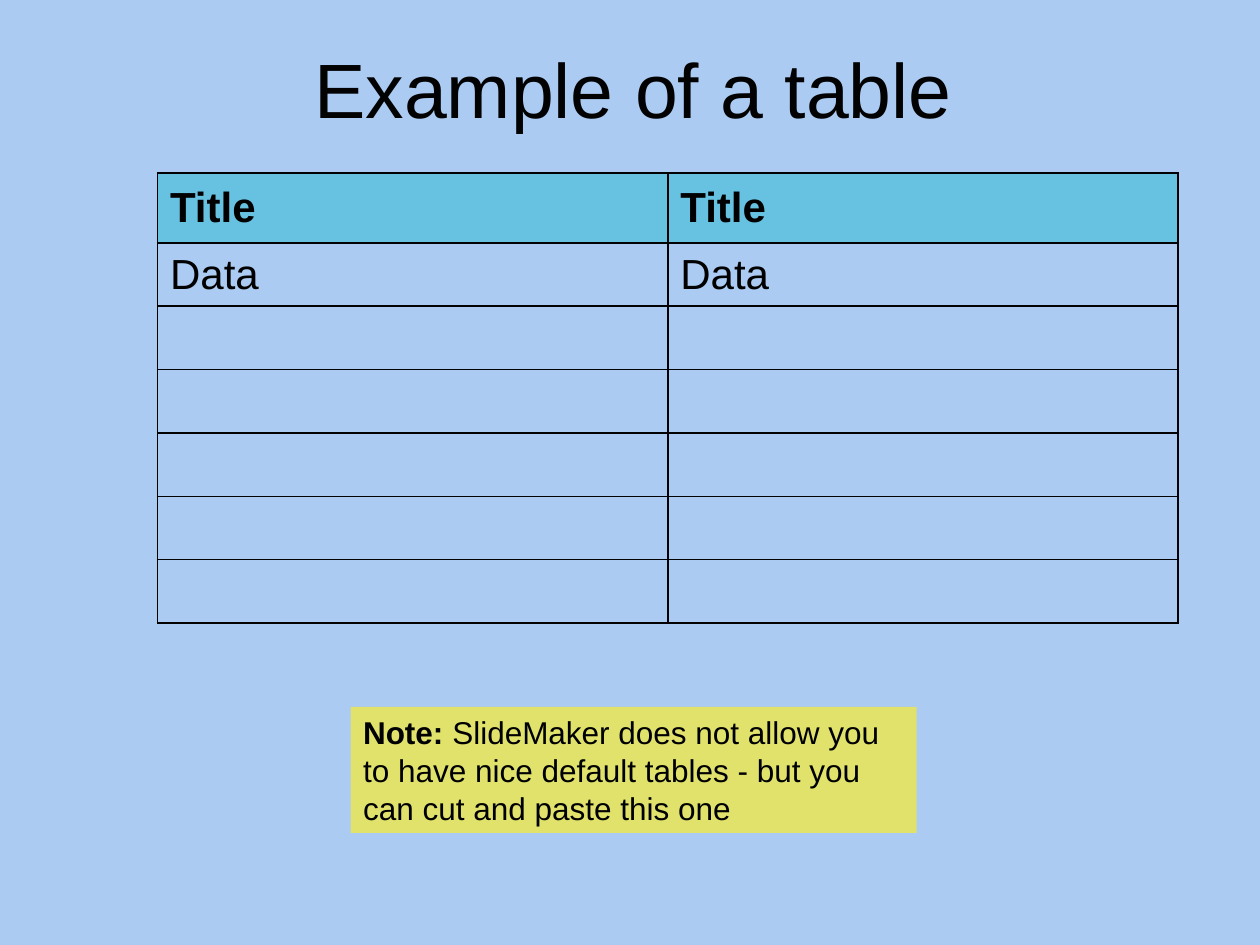
import pptx
import pptx.util
import pptx.dml.color
import pptx.enum.shapes
import pptx.enum.text
import pptx.oxml
import pptx.oxml.ns

Pt = pptx.util.Pt
ANCHOR = pptx.enum.text.MSO_ANCHOR
ALIGN = pptx.enum.text.PP_ALIGN

HEADING = "Example of a table"
ROWS = [("Title", "Title"), ("Data", "Data")] + [("", "")] * 5
NOTE = [
    ("Note: ", True),
    ("SlideMaker does not allow you to have nice default tables"
     " - but you can cut and paste this one", False),
]
COLORS = {
    "background": "ABCBF2",
    "heading": "020202",
    "border": "020202",
    "text": "000000",
    "header": "67C1E0",
    "note": "F2EA40",
}
FONT = "Arial"
HEADER_HEIGHT, ROW_HEIGHT, COLUMN_WIDTH = 40, 36.2, 291.6
NOTE_OPACITY = 75


def color(name):
    return pptx.dml.color.RGBColor.from_string(COLORS[name])


def add_run(paragraph, text, size, color_name="text", bold=False):
    run = paragraph.add_run()
    run.text = text
    run.font.name = FONT
    run.font.size = Pt(size)
    run.font.bold = bold
    run.font.color.rgb = color(color_name)


def add_borders(cell):
    properties = cell._tc.get_or_add_tcPr()
    for side in "LRTB":
        properties.append(pptx.oxml.parse_xml(
            f'<a:ln{side} {pptx.oxml.ns.nsdecls("a")} w="{Pt(1)}"><a:solidFill>'
            f'<a:srgbClr val="{COLORS["border"]}"/></a:solidFill></a:ln{side}>'))


def add_heading(slide):
    heading = slide.shapes.title
    heading.left, heading.top = Pt(38), Pt(5)
    heading.width, heading.height = Pt(648), Pt(90)
    heading.text_frame.vertical_anchor = ANCHOR.MIDDLE
    paragraph = heading.text_frame.paragraphs[0]
    paragraph.alignment = ALIGN.CENTER
    add_run(paragraph, HEADING, 44, "heading")


def add_data_table(slide):
    columns = len(ROWS[0])
    heights = [HEADER_HEIGHT] + [ROW_HEIGHT] * (len(ROWS) - 1)
    table = slide.shapes.add_table(
        len(ROWS), columns, Pt(90), Pt(98.8),
        Pt(columns * COLUMN_WIDTH), Pt(sum(heights))).table
    for column in table.columns:
        column.width = Pt(COLUMN_WIDTH)
    for r, (texts, height) in enumerate(zip(ROWS, heights)):
        table.rows[r].height = Pt(height)
        for c, text in enumerate(texts):
            cell = table.cell(r, c)
            cell.vertical_anchor = ANCHOR.MIDDLE
            add_borders(cell)
            if r == 0:
                cell.fill.solid()
                cell.fill.fore_color.rgb = color("header")
            else:
                cell.fill.background()
            if text:
                add_run(cell.text_frame.paragraphs[0], text, 24, bold=r == 0)


def add_note(slide):
    note = slide.shapes.add_shape(
        pptx.enum.shapes.MSO_SHAPE.RECTANGLE, Pt(200.4), Pt(404), Pt(323.5), Pt(72))
    note.shadow.inherit = False
    note.line.fill.background()
    note.fill.solid()
    note.fill.fore_color.rgb = color("note")
    fill_color = note._element.spPr.find(".//" + pptx.oxml.ns.qn("a:srgbClr"))
    fill_color.append(pptx.oxml.parse_xml(
        f'<a:alpha {pptx.oxml.ns.nsdecls("a")} val="{NOTE_OPACITY * 1000}"/>'))
    frame = note.text_frame
    frame.word_wrap = True
    frame.auto_size = pptx.enum.text.MSO_AUTO_SIZE.SHAPE_TO_FIT_TEXT
    frame.vertical_anchor = ANCHOR.TOP
    paragraph = frame.paragraphs[0]
    paragraph.alignment = ALIGN.LEFT
    for text, bold in NOTE:
        add_run(paragraph, text, 18, bold=bold)


def main():
    deck = pptx.Presentation()
    deck.slide_width, deck.slide_height = Pt(720), Pt(540)
    slide = deck.slides.add_slide(deck.slide_layouts[5])
    slide.background.fill.solid()
    slide.background.fill.fore_color.rgb = color("background")
    add_heading(slide)
    add_data_table(slide)
    add_note(slide)
    deck.save("out.pptx")


if __name__ == "__main__":
    main()
